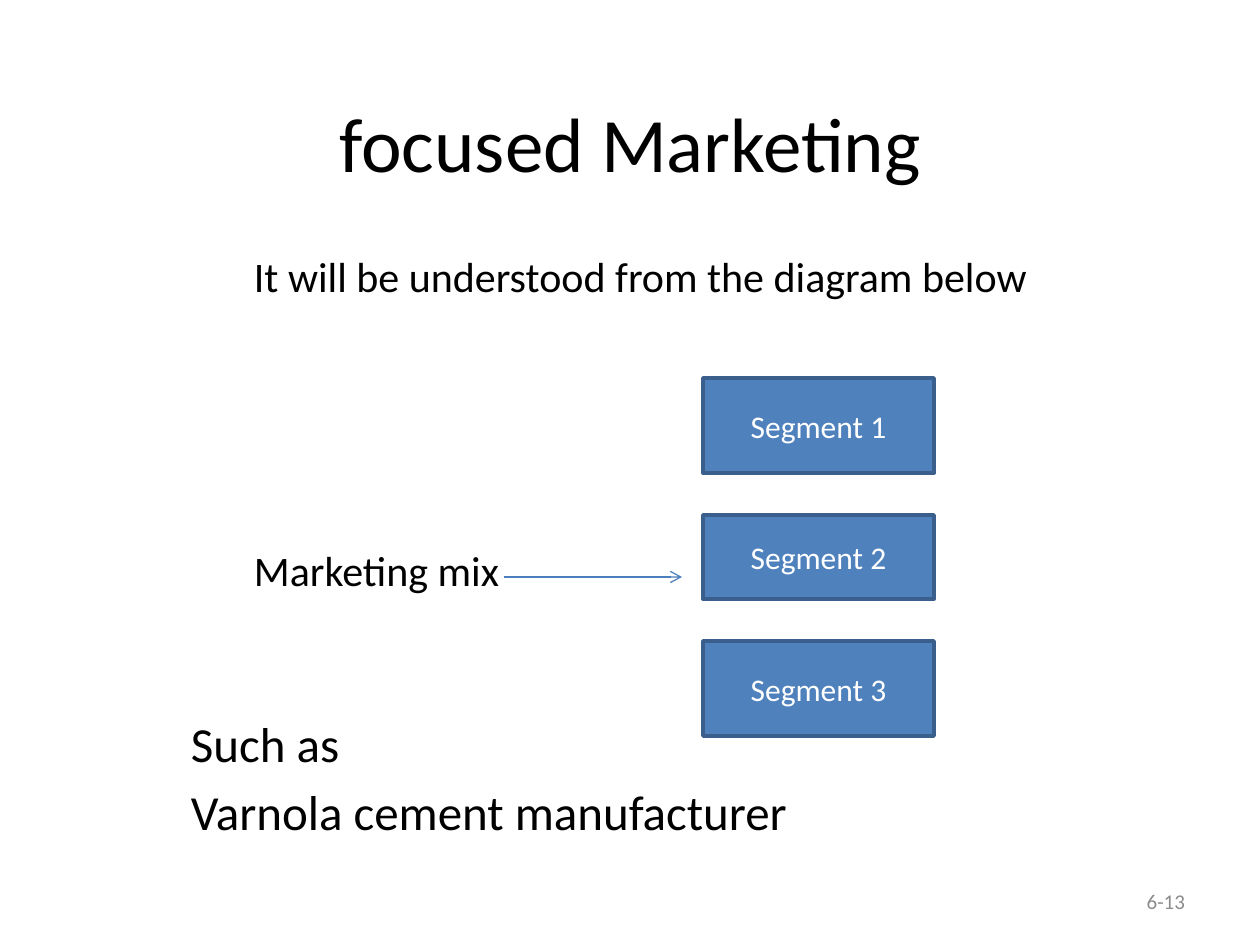
from lxml import etree
from pptx import Presentation
from pptx import util as u
from pptx.dml.color import RGBColor
from pptx.enum import shapes, text
from pptx.oxml.ns import qn

SCALE = 914400 / 126
BLACK = RGBColor(0, 0, 0)
WHITE = RGBColor(255, 255, 255)
GREY = RGBColor(0x8C, 0x8C, 0x8C)
BLUE = RGBColor(0x4F, 0x81, 0xBD)
EDGE = RGBColor(0x3A, 0x5F, 0x8C)
WIRE = RGBColor(0x4B, 0x7E, 0xBC)
LEFT, MID, RIGHT = text.PP_ALIGN.LEFT, text.PP_ALIGN.CENTER, text.PP_ALIGN.RIGHT


def px(*vals):
    """Turn pixel lengths into EMU."""
    return [u.Emu(round(v * SCALE)) for v in vals]


def write(shape, words, size=24, color=BLACK, align=LEFT, gap=0):
    """Fill a shape with middle-anchored text, one paragraph a line."""
    frame = shape.text_frame
    frame.word_wrap = True
    frame.vertical_anchor = text.MSO_ANCHOR.MIDDLE
    frame.margin_left = frame.margin_right = px(12)[0]
    frame.margin_top = frame.margin_bottom = 0
    frame.text = words
    for i, para in enumerate(frame.paragraphs):
        para.alignment = align
        para.space_before = u.Pt(gap if i else 0)
        para.font.size = u.Pt(size)
        para.font.name = "Calibri"
        para.font.color.rgb = color


def label(slide, words, box, **style):
    """Add a text box at the given pixel box."""
    write(slide.shapes.add_textbox(*px(*box)), words, **style)


def block(slide, words, box):
    """Add a blue segment rectangle."""
    rect = slide.shapes.add_shape(shapes.MSO_SHAPE.RECTANGLE, *px(*box))
    rect.shadow.inherit = False
    rect.fill.solid()
    rect.fill.fore_color.rgb = BLUE
    rect.line.color.rgb = EDGE
    rect.line.width = u.Pt(2)
    write(rect, words, size=18, color=WHITE, align=MID)


def arrow(slide, ends):
    """Add a thin line with an open head at its end."""
    wire = slide.shapes.add_connector(shapes.MSO_CONNECTOR.STRAIGHT, *px(*ends))
    wire.line.color.rgb = WIRE
    wire.line.width = u.Pt(0.75)
    etree.SubElement(wire.line._get_or_add_ln(), qn("a:tailEnd"), type="arrow")
    etree.SubElement(wire._element.spPr, qn("a:effectLst"))


def main():
    """Build the slide and save it."""
    deck = Presentation()
    deck.slide_width, deck.slide_height = px(1260, 945)
    slide = deck.slides.add_slide(deck.slide_layouts[6])
    label(slide, "focused Marketing", (53, 63, 1155, 158), size=44, align=MID)
    label(slide, "It will be understood from the diagram below", (242, 250, 892, 51))
    label(slide, "Marketing mix", (242, 544, 300, 51))
    label(slide, "Such as\nVarnola cement manufacturer", (179, 713, 955, 128),
          size=28, gap=4.7)
    top = 378
    for num, high in enumerate((95, 84, 95), 1):
        block(slide, f"Segment {num}", (703, top, 231, high))
        top += high + 42
    arrow(slide, (504, 577, 682, 577))
    label(slide, "6-13", (903, 876, 294, 50), size=12, color=GREY, align=RIGHT)
    deck.save("out.pptx")


if __name__ == "__main__":
    main()
